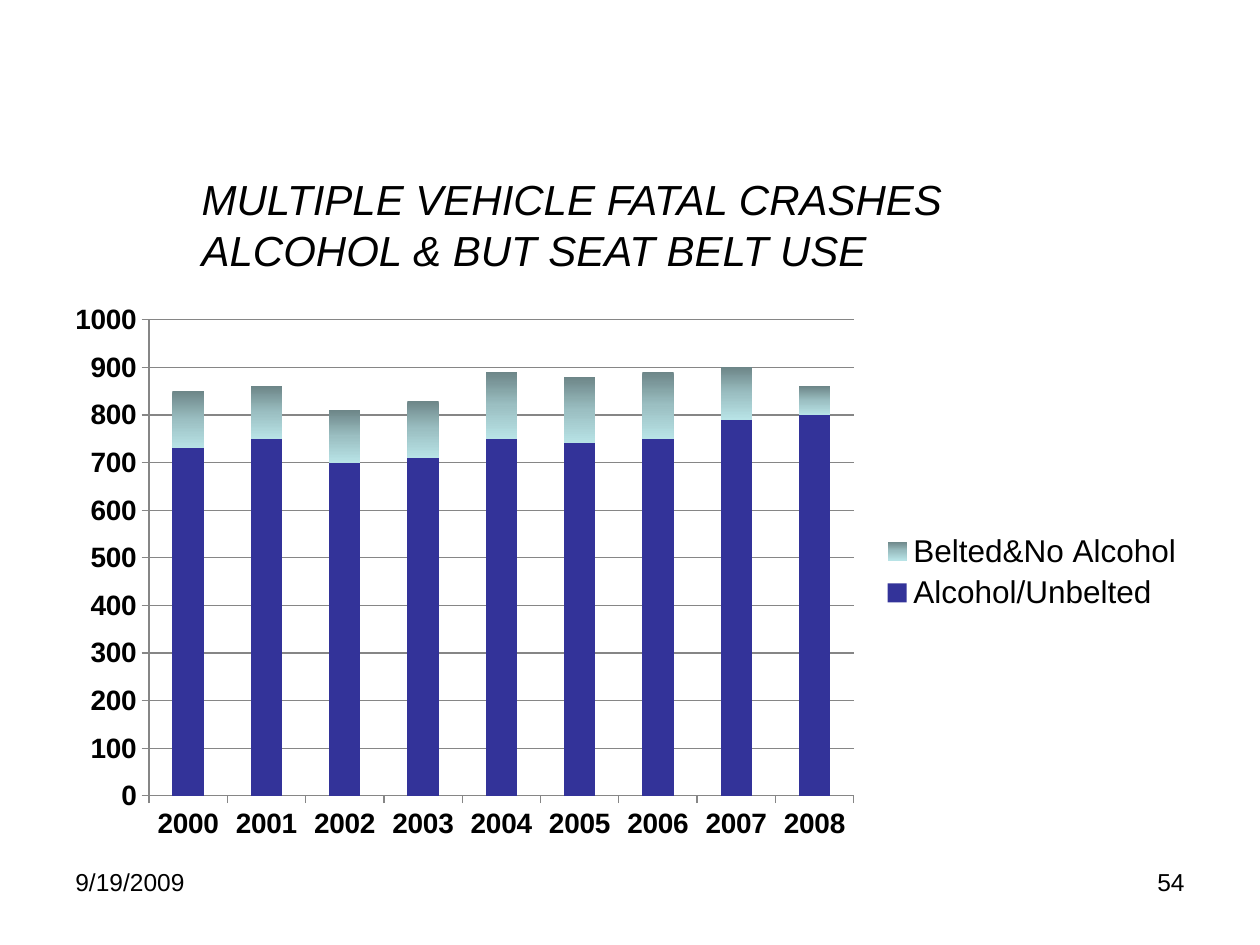
from lxml import etree
from pptx import Presentation
from pptx import util as u
from pptx.chart.data import CategoryChartData
from pptx.dml.color import RGBColor
from pptx.enum import chart as charts, text
from pptx.oxml import parse_xml
from pptx.oxml.ns import nsdecls, qn

COLORS = {"text": "000000", "grid": "868686", "alcohol": "333399"}
GRADIENT = {0: "6D8688", 50: "9BBFC2", 100: "B8E3E6"}
YEARS = [str(year) for year in range(2000, 2009)]
CRASHES = {
    "Alcohol/Unbelted": (730, 750, 700, 710, 750, 740, 750, 790, 800),
    "Belted&No Alcohol": (120, 110, 110, 120, 140, 140, 140, 110, 60),
}


def color(name):
    """Return a named colour."""
    return RGBColor.from_string(COLORS[name])


def set_font(font, size, bold=False, italic=False):
    """Apply the slide's typeface and text colour."""
    font.name, font.size = "Arial", u.Pt(size)
    font.bold, font.italic = bold, italic
    font.color.rgb = color("text")


def add_title(page, box):
    """Place the two-line heading in the title placeholder."""
    title = page.shapes.title
    title.left, title.top, title.width, title.height = box
    frame = title.text_frame
    frame.text = "MULTIPLE VEHICLE FATAL CRASHES \vALCOHOL & BUT SEAT BELT USE"
    frame.vertical_anchor = text.MSO_ANCHOR.TOP
    frame.auto_size = text.MSO_AUTO_SIZE.NONE
    para = frame.paragraphs[0]
    para.alignment = text.PP_ALIGN.LEFT
    set_font(para.font, 24, italic=True)


def add_footer(page, box, words, alignment):
    """Place one footer entry."""
    frame = page.shapes.add_textbox(*box).text_frame
    frame.word_wrap = True
    frame.text = words
    para = frame.paragraphs[0]
    para.alignment = alignment
    set_font(para.font, 14)


def style_axis(axis):
    """Format the labels, line and ticks of an axis."""
    set_font(axis.tick_labels.font, 16, bold=True)
    axis.format.line.color.rgb = color("grid")
    axis.major_tick_mark = charts.XL_TICK_MARK.OUTSIDE


def fill_gradient(series):
    """Fill a series with the vertical gradient."""
    series.format.fill.gradient()
    stops = "".join(
        f'<a:gs pos="{place * 1000}"><a:srgbClr val="{shade}"/></a:gs>'
        for place, shade in GRADIENT.items()
    )
    gradient = parse_xml(
        f'<a:gradFill {nsdecls("a")} rotWithShape="1"><a:gsLst>{stops}</a:gsLst>'
        '<a:lin ang="5400000" scaled="0"/></a:gradFill>'
    )
    former = series.format.fill._xPr.find(qn("a:gradFill"))
    former.getparent().replace(former, gradient)


def set_plot_area(chart, **fractions):
    """Fix the inner plot area as fractions of the chart."""
    area = chart._chartSpace.chart.plotArea
    for former in area.findall(qn("c:layout")):
        area.remove(former)
    layout = etree.Element(qn("c:layout"))
    manual = etree.SubElement(layout, qn("c:manualLayout"))
    settings = {"layoutTarget": "inner", "xMode": "edge", "yMode": "edge", **fractions}
    for name, value in settings.items():
        etree.SubElement(manual, qn(f"c:{name}")).set("val", str(value))
    area.insert(0, layout)


def add_crash_chart(page, box):
    """Place the stacked columns of crashes by year."""
    data = CategoryChartData()
    data.categories = YEARS
    for name, values in CRASHES.items():
        data.add_series(name, values)
    kind = charts.XL_CHART_TYPE.COLUMN_STACKED
    chart = page.shapes.add_chart(kind, *box, data).chart
    set_font(chart.font, 10)
    chart.has_title = False
    chart.has_legend = True
    chart.legend.position = charts.XL_LEGEND_POSITION.RIGHT
    chart.legend.include_in_layout = False
    set_font(chart.legend.font, 18)
    style_axis(chart.category_axis)
    scale = chart.value_axis
    style_axis(scale)
    scale.minimum_scale, scale.maximum_scale, scale.major_unit = 0, 1000, 100
    scale.has_major_gridlines = True
    scale.major_gridlines.format.line.color.rgb = color("grid")
    plot = chart.plots[0]
    plot.vary_by_categories = False
    plot.gap_width, plot.overlap = 150, 100
    alcohol, belted = plot.series
    alcohol.format.fill.solid()
    alcohol.format.fill.fore_color.rgb = color("alcohol")
    fill_gradient(belted)
    set_plot_area(chart, x=0.084, y=0.047, w=0.616, h=0.855)


def inches(*lengths):
    """Turn numbers into lengths."""
    return [u.Inches(length) for length in lengths]


def main():
    """Build and save the slide."""
    deck = Presentation()
    deck.slide_width, deck.slide_height = inches(10, 7.5)
    page = deck.slides.add_slide(deck.slide_layouts[5])
    add_title(page, inches(1.5, 1.33, 8.5, 1.49))
    add_footer(page, inches(0.5, 6.83, 2.33, 0.52), "9/19/2009", text.PP_ALIGN.LEFT)
    add_footer(page, inches(7.17, 6.83, 2.33, 0.52), "54", text.PP_ALIGN.RIGHT)
    add_crash_chart(page, inches(0.42, 2.33, 9.08, 4.42))
    deck.save("out.pptx")


if __name__ == "__main__":
    main()
